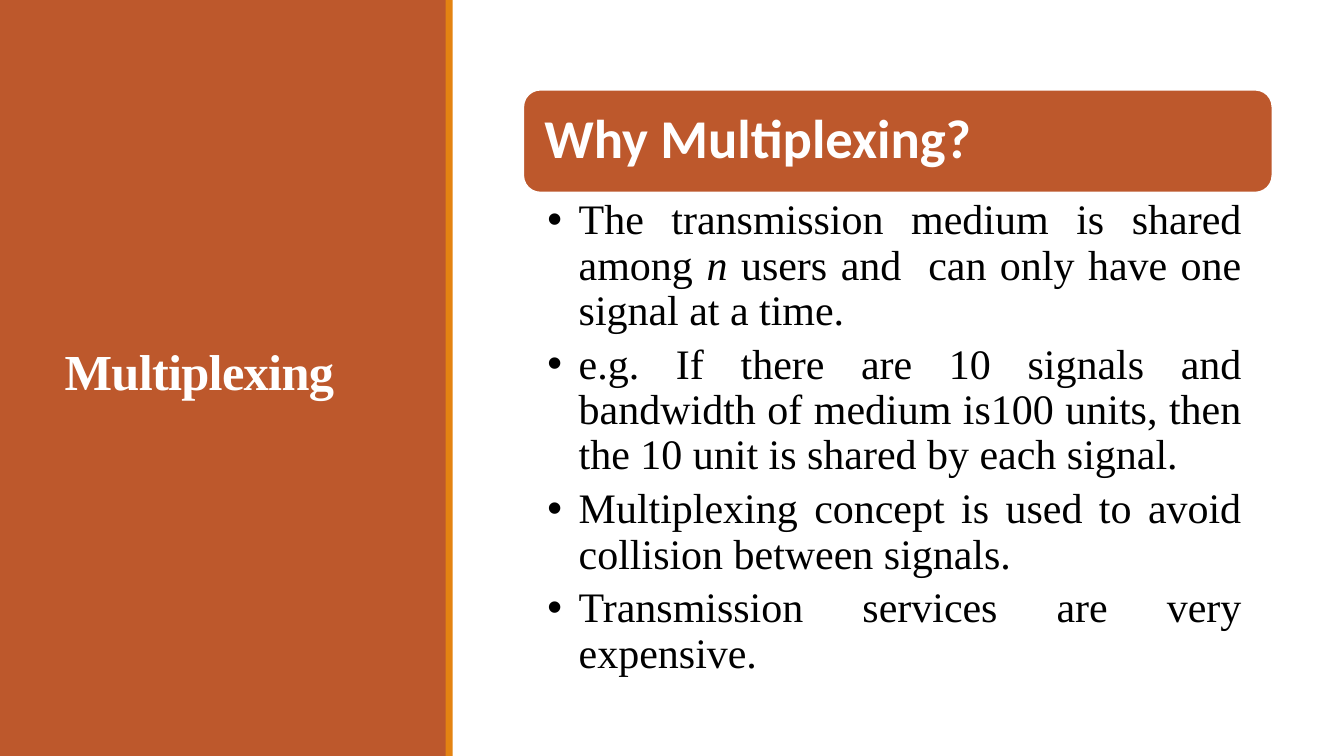
from lxml.etree import SubElement
from pptx import Presentation
from pptx.dml.color import RGBColor
from pptx.enum.shapes import MSO_SHAPE
from pptx.enum.text import MSO_ANCHOR, MSO_AUTO_SIZE, PP_ALIGN
from pptx.oxml.ns import qn
from pptx.util import Inches, Pt

RUST = RGBColor(0xBD, 0x58, 0x2C)
ORANGE = RGBColor(0xE4, 0x83, 0x12)
WHITE = RGBColor(0xFF, 0xFF, 0xFF)
BLACK = RGBColor(0, 0, 0)
SERIF = "Times New Roman"

# Each reason is a list of (text, italic) spans.
REASONS = [
    [
        ("The transmission medium is shared among ", False),
        ("n", True),
        (" users and  can only have one signal at a time.", False),
    ],
    [("e.g. If there are 10 signals and bandwidth of medium is100 units, "
      "then the 10 unit is shared by each signal.", False)],
    [("Multiplexing concept is used to avoid collision between signals.", False)],
    [("Transmission services are very expensive.", False)],
]


def apply_format(target, values):
    for name, value in values.items():
        setattr(target, name, value)


def style_font(font, color, **values):
    apply_format(font, values)
    font.color.rgb = color


def set_frame(frame, anchor, left, top, right, bottom):
    """Set wrapping, anchor and insets (in inches) of a text frame."""
    apply_format(frame, {
        "word_wrap": True,
        "auto_size": MSO_AUTO_SIZE.NONE,
        "vertical_anchor": anchor,
        "margin_left": Inches(left),
        "margin_top": Inches(top),
        "margin_right": Inches(right),
        "margin_bottom": Inches(bottom),
    })


def add_panel(page, kind, left, top, width, height, color):
    panel = page.shapes.add_shape(
        kind, Inches(left), Inches(top), Inches(width), Inches(height))
    panel.shadow.inherit = False
    panel.fill.solid()
    panel.fill.fore_color.rgb = color
    panel.line.fill.background()
    return panel


def add_title(page, text):
    title = page.shapes.title
    apply_format(title, {
        "left": Inches(0.54), "top": Inches(0.57),
        "width": Inches(3.37), "height": Inches(6.31),
    })
    page.shapes._spTree.append(title._element)  # bring in front of the side panel
    set_frame(title.text_frame, MSO_ANCHOR.MIDDLE, 0.1, 0.05, 0.1, 0.05)
    para = title.text_frame.paragraphs[0]
    apply_format(para, {"alignment": PP_ALIGN.LEFT, "line_spacing": 0.85,
                        "space_before": Pt(0), "space_after": Pt(10)})
    span = para.add_run()
    span.text = text
    style_font(span.font, WHITE, name=SERIF, size=Pt(36), bold=True)
    span._r.get_or_add_rPr().set("spc", "-50")


def add_heading(page, text):
    banner = add_panel(page, MSO_SHAPE.ROUNDED_RECTANGLE, 5.19, 0.89, 7.43, 1.02, RUST)
    banner.line.color.rgb = WHITE
    banner.line.width = Pt(1.25)
    set_frame(banner.text_frame, MSO_ANCHOR.MIDDLE, 0.16, 0.16, 0.16, 0.16)
    para = banner.text_frame.paragraphs[0]
    para.text = text
    apply_format(para, {"alignment": PP_ALIGN.LEFT, "line_spacing": 0.9})
    style_font(para.runs[0].font, WHITE, name="Calibri", size=Pt(39), bold=True)


def add_bullet(para, indent):
    properties = para._p.get_or_add_pPr()
    properties.set("marL", str(indent))
    properties.set("indent", str(-indent))
    SubElement(properties, qn("a:buFont"), typeface="Arial")
    SubElement(properties, qn("a:buChar"), char="•")


def add_reasons(page, reasons):
    box = page.shapes.add_textbox(
        Inches(5.19), Inches(1.92), Inches(7.43), Inches(4.77))
    frame = box.text_frame
    set_frame(frame, MSO_ANCHOR.TOP, 0.24, 0.05, 0.3, 0.05)
    for index, reason in enumerate(reasons):
        para = frame.add_paragraph() if index else frame.paragraphs[0]
        add_bullet(para, Inches(0.31))
        apply_format(para, {"alignment": PP_ALIGN.JUSTIFY, "line_spacing": 0.9,
                            "space_after": Pt(6)})
        for text, italic in reason:
            span = para.add_run()
            span.text = text
            style_font(span.font, BLACK, name=SERIF, size=Pt(30), italic=italic)


def main():
    deck = Presentation()
    deck.slide_width, deck.slide_height = Inches(13.33), Inches(7.5)
    page = deck.slides.add_slide(deck.slide_layouts.get_by_name("Title Only"))
    add_panel(page, MSO_SHAPE.RECTANGLE, 0, 0, 4.43, 7.5, RUST)
    add_title(page, "Multiplexing")
    add_panel(page, MSO_SHAPE.RECTANGLE, 4.42, 0, 0.07, 7.5, ORANGE)
    add_heading(page, "Why Multiplexing?")
    add_reasons(page, REASONS)
    deck.save("out.pptx")


if __name__ == "__main__":
    main()
